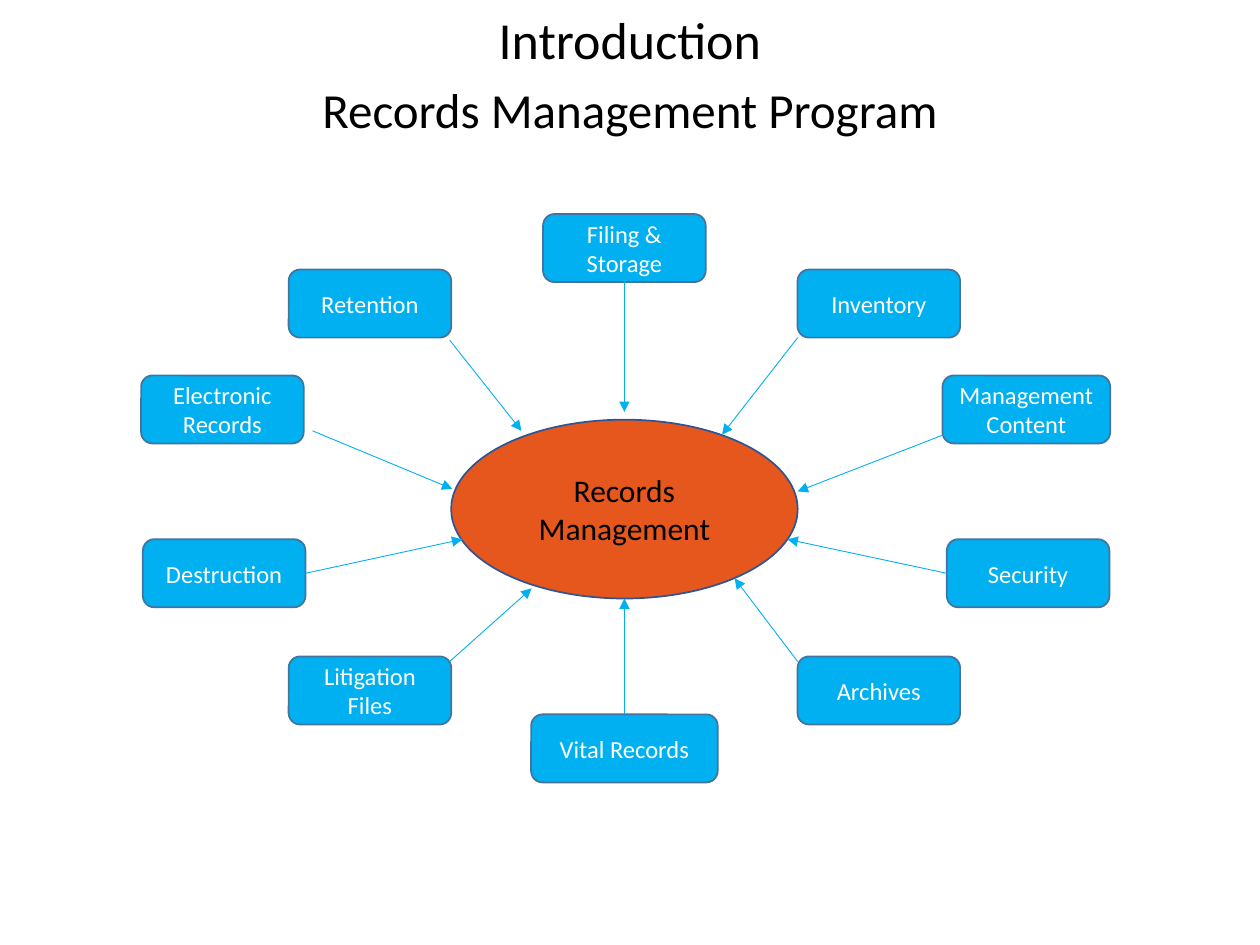
import pptx
import pptx.dml.color
import pptx.enum.shapes
import pptx.enum.text
import pptx.oxml
import pptx.oxml.ns
import pptx.util

Pt = pptx.util.Pt
SHAPES = pptx.enum.shapes.MSO_SHAPE
ANCHOR = pptx.enum.text.MSO_ANCHOR
BOTTOM, LEFT, TOP, RIGHT = 2, 1, 0, 3

THEME = {
    "font": "Calibri",
    "title": {"size": 29.7, "color": "000000"},
    "subtitle": {"size": 28, "color": "000000"},
    "hub": {"size": 18, "color": "000000", "fill": "E6571E", "line": "325491"},
    "topic": {"size": 14, "color": "FFFFFF", "fill": "00B0F0", "line": "43739E"},
    "arrow": {"color": "00B0F0", "width": 0.5},
}

TITLE = "Introduction"
SUBTITLE = "Records Management Program"
HUB = "Records Management"

# Columns and rows of box centres, mirrored around the hub
CENTER_X = 356.8
INNER, OUTER = 145.4, 229.7
ROWS = (141.8, 173.5, 234, 327.6, 394.6, 427.7)
BOX_WIDTH, BOX_HEIGHT = 92.9, 38.9
HUB_SIZE, HUB_Y = (198, 102.2), 290.9

# Text, offset from the centre, row, width, arrow start (side or point), arrow tip
TOPICS = [
    ("Filing & Storage", 0, 0, BOX_WIDTH, BOTTOM, (CENTER_X, 235.4)),
    ("Inventory", INNER, 1, BOX_WIDTH, (455.8, 193), (412.6, 248.4)),
    ("Management Content", OUTER, 2, 95.8, (539.3, 248.4), (455.8, 280.8)),
    ("Security", OUTER + 1, 3, BOX_WIDTH, LEFT, (450, 308.2)),
    ("Archives", INNER, 4, BOX_WIDTH, (455.8, 378), (419.8, 330.5)),
    ("Vital Records", 0, 5, 106.6, TOP, (CENTER_X, 342)),
    ("Litigation Files", -INNER, 4, BOX_WIDTH, (257, 378), (303.8, 336.2)),
    ("Destruction", 1 - OUTER, 3, BOX_WIDTH, RIGHT, (264.2, 308.2)),
    ("Electronic Records", -OUTER, 2, BOX_WIDTH, (178.6, 246.2), (258.5, 279.4)),
    ("Retention", -INNER, 1, BOX_WIDTH, (257, 194.4), (298, 246.2)),
]


def rgb(value):
    return pptx.dml.color.RGBColor.from_string(value)


def set_text(shape, text, style, anchor=ANCHOR.MIDDLE):
    frame = shape.text_frame
    formats = {
        "word_wrap": True,
        "auto_size": pptx.enum.text.MSO_AUTO_SIZE.NONE,
        "vertical_anchor": anchor,
    }
    for name, value in formats.items():
        setattr(frame, name, value)
    para = frame.paragraphs[0]
    para.alignment = pptx.enum.text.PP_ALIGN.CENTER
    span = para.add_run()
    span.text = text
    for name, value in {"name": THEME["font"], "size": Pt(style["size"])}.items():
        setattr(span.font, name, value)
    span.font.color.rgb = rgb(style["color"])
    return para


def add_node(page, kind, text, center, size, style):
    left, top = (middle - length / 2 for middle, length in zip(center, size))
    box = page.shapes.add_shape(kind, *map(Pt, (left, top, *size)))
    box.shadow.inherit = False
    box.fill.solid()
    box.fill.fore_color.rgb = rgb(style["fill"])
    box.line.color.rgb = rgb(style["line"])
    box.line.width = Pt(1)
    set_text(box, text, style)
    return box


def add_arrow(page, box, start, tip):
    """Draw from a side of the box, or from a free point, to the tip."""
    joined = isinstance(start, int)
    begin = tip if joined else start
    arrow = page.shapes.add_connector(
        pptx.enum.shapes.MSO_CONNECTOR.STRAIGHT, *map(Pt, (*begin, *tip)))
    if joined:
        arrow.begin_connect(box, start)
    arrow.line.color.rgb = rgb(THEME["arrow"]["color"])
    arrow.line.width = Pt(THEME["arrow"]["width"])
    qn = pptx.oxml.ns.qn
    properties = arrow.element.find(qn("p:spPr"))
    head = properties.find(qn("a:ln")).makeelement(qn("a:tailEnd"), {"type": "triangle"})
    properties.find(qn("a:ln")).append(head)
    properties.append(properties.makeelement(qn("a:effectLst"), {}))


def main():
    deck = pptx.Presentation()
    deck.slide_width, deck.slide_height = Pt(720), Pt(540)
    page = deck.slides.add_slide(deck.slide_layouts[5])

    title = page.shapes.title
    place = {"left": 36, "top": 12.2, "width": 648, "height": 23.8}
    for name, value in place.items():
        setattr(title, name, Pt(value))
    set_text(title, TITLE, THEME["title"]).line_spacing = 0.9

    subtitle = page.shapes.add_textbox(Pt(36), Pt(41.8), Pt(648), Pt(41))
    set_text(subtitle, SUBTITLE, THEME["subtitle"], ANCHOR.TOP)

    add_node(page, SHAPES.OVAL, HUB, (CENTER_X, HUB_Y), HUB_SIZE, THEME["hub"])
    for text, offset, row, width, start, tip in TOPICS:
        box = add_node(page, SHAPES.ROUNDED_RECTANGLE, text,
                       (CENTER_X + offset, ROWS[row]), (width, BOX_HEIGHT), THEME["topic"])
        add_arrow(page, box, start, tip)

    deck.save("out.pptx")


if __name__ == "__main__":
    main()
